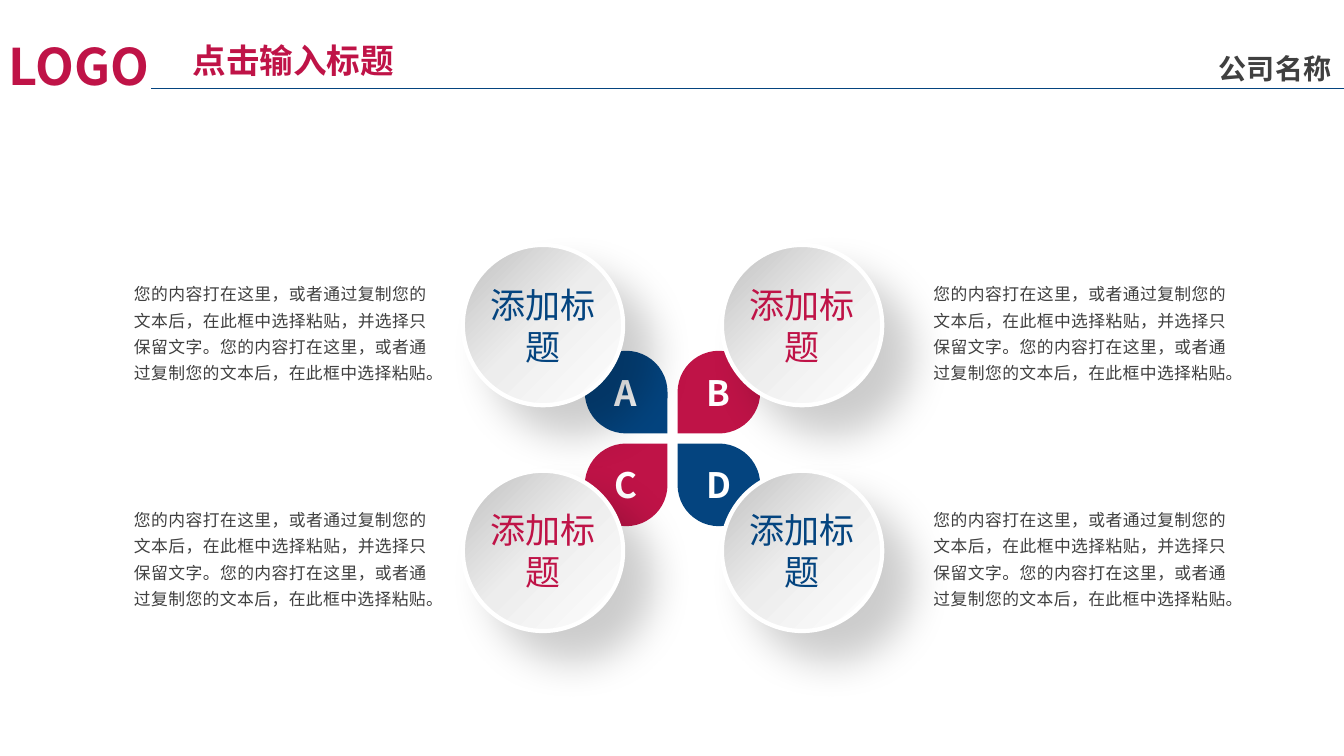
from lxml import etree
from pptx import Presentation
from pptx.dml.color import RGBColor
from pptx.enum.shapes import MSO_CONNECTOR, MSO_SHAPE
from pptx.enum.text import MSO_ANCHOR, MSO_AUTO_SIZE, PP_ALIGN
from pptx.oxml.ns import qn
from pptx.util import Inches, Pt

STRAIGHT = MSO_CONNECTOR.STRAIGHT
TEARDROP, OVAL, RECTANGLE = MSO_SHAPE.TEAR, MSO_SHAPE.OVAL, MSO_SHAPE.RECTANGLE
TOP, MIDDLE = MSO_ANCHOR.TOP, MSO_ANCHOR.MIDDLE
LEFT, CENTER, JUSTIFY = PP_ALIGN.LEFT, PP_ALIGN.CENTER, PP_ALIGN.JUSTIFY
GROW, FIXED = MSO_AUTO_SIZE.SHAPE_TO_FIT_TEXT, MSO_AUTO_SIZE.NONE

FONT = "Noto Sans CJK SC"
BLUE, RED, GRAY, WHITE = "04447F", "BF1347", "404040", "FFFFFF"
DISC_STOPS = [(0, "C0C0C0"), (49, "EDEDED"), (100, WHITE)]
BODY = ("您的内容打在这里，或者通过复制您的文本后，在此框中选择粘贴，并选择只"
        "保留文字。您的内容打在这里，或者通过复制您的文本后，在此框中选择粘贴。")

DISC, PETAL = 1.59, 0.82
# Letter, column, row, petal rotation, colour
TOPICS = [("A", 0, 0, 90, BLUE), ("B", 1, 0, 180, RED),
          ("C", 0, 1, 0, RED), ("D", 1, 1, 270, BLUE)]


def rgb(color):
    return RGBColor.from_string(color)


def box(left, top, width, height):
    return [Inches(length) for length in (left, top, width, height)]


def add_child(parent, tag, **attributes):
    child = etree.SubElement(parent, qn(tag))
    for name, value in attributes.items():
        child.set(name, str(value))
    return child


def write(shape, text, size, color, bold=False, align=LEFT, anchor=MIDDLE,
          wrap=False, fit=GROW, margins=(0.08, 0.04), spacing=1.0):
    frame = shape.text_frame
    frame.word_wrap = wrap
    frame.auto_size = fit
    frame.vertical_anchor = anchor
    frame.margin_left = frame.margin_right = Inches(margins[0])
    frame.margin_top = frame.margin_bottom = Inches(margins[1])
    paragraph = frame.paragraphs[0]
    paragraph.alignment = align
    paragraph.line_spacing = spacing
    run = paragraph.add_run()
    run.text = text
    run.font.name = FONT
    run.font.size = Pt(size)
    run.font.bold = bold
    run.font.color.rgb = rgb(color)
    add_child(run.font._element, "a:ea", typeface=FONT)


def add_solid(shapes, kind, area, color):
    shape = shapes.add_shape(kind, *box(*area))
    shape.shadow.inherit = False
    shape.fill.solid()
    shape.fill.fore_color.rgb = rgb(color)
    shape.line.fill.background()
    return shape


def add_header(slide, left, top, width):
    """Logo word, slide title, company name and the rule below them."""
    rule_top = top + 0.57
    rule = slide.shapes.add_connector(
        STRAIGHT, Inches(left + 1.5), Inches(rule_top),
        Inches(left + width), Inches(rule_top))
    rule.line.color.rgb = rgb(BLUE)
    rule.line.width = Pt(1)
    add_child(rule._element.spPr, "a:effectLst")

    title = slide.shapes.title
    title.left, title.top, title.width, title.height = box(
        left + 1.83, top + 0.05, 2.17, 0.48)
    write(title, "点击输入标题", 24, RED, bold=True)

    # Slightly wider than its four characters, so that they stay on one line
    company = slide.shapes.add_textbox(
        *box(left + width - 1.32, top + 0.16, 1.32, 0.41))
    write(company, "公司名称", 20, GRAY, bold=True, wrap=True, fit=FIXED)
    logo = slide.shapes.add_textbox(*box(left, top, 1.64, 0.68))
    write(logo, "LOGO", 36, RED, bold=True)


def add_description(slide, left, top):
    text_box = slide.shapes.add_textbox(*box(left, top, 3.1, 1.15))
    write(text_box, BODY, 12, GRAY, align=JUSTIFY, anchor=TOP, wrap=True,
          margins=(0.1, 0.05), spacing=1.3)


def add_petal(slide, left, top, letter, rotation, color):
    """Teardrop grouped with its letter."""
    group = slide.shapes.add_group_shape()
    petal = add_solid(group.shapes, TEARDROP, (left, top, PETAL, PETAL), color)
    petal.rotation = rotation
    label = add_solid(group.shapes, RECTANGLE,
                      (left + 0.18, top + 0.15, 0.46, 0.52), color)
    write(label, letter, 25, WHITE, bold=True, align=CENTER,
          margins=(0.1, 0.05))


def add_disc(slide, left, top, color):
    """Shaded circle with a white rim and a soft shadow."""
    disc = slide.shapes.add_shape(OVAL, *box(left, top, DISC, DISC))
    disc.line.color.rgb = rgb(WHITE)
    disc.line.width = Pt(3)

    # Three-stop gradient
    disc.fill.gradient()
    disc.fill.gradient_angle = 315
    properties = disc._element.spPr
    stops = properties.find(".//" + qn("a:gsLst"))
    for stop in list(stops):
        stops.remove(stop)
    for position, stop_color in DISC_STOPS:
        stop = add_child(stops, "a:gs", pos=position * 1000)
        add_child(stop, "a:srgbClr", val=stop_color)

    # Shadow towards the lower right
    disc.shadow.inherit = False
    shadow = add_child(properties.find(qn("a:effectLst")), "a:outerShdw",
                       blurRad=Pt(29), dist=Pt(29), dir=45 * 60000,
                       algn="tl", rotWithShape=0)
    shade = add_child(shadow, "a:srgbClr", val="000000")
    add_child(shade, "a:alpha", val=20000)

    write(disc, "添加标题", 25, color, align=CENTER, wrap=True, fit=FIXED,
          margins=(0, 0.05))


def add_clover(slide, left, top):
    """Four descriptions, four petals and four discs, back to front."""
    for letter, column, row, rotation, color in TOPICS:
        add_description(slide, left + 7.93 * column, top + 0.28 + 2.24 * row)
    for letter, column, row, rotation, color in TOPICS:
        add_petal(slide, left + 4.57 + 0.92 * column, top + 1.05 + 0.92 * row,
                  letter, rotation, color)
    for letter, column, row, rotation, color in TOPICS:
        add_disc(slide, left + 3.36 + 2.57 * column, top + 2.24 * row, color)


def main():
    presentation = Presentation()
    presentation.slide_width = Inches(13.33)
    presentation.slide_height = Inches(7.5)
    slide = presentation.slides.add_slide(presentation.slide_layouts[5])
    add_clover(slide, 1.23, 2.43)
    add_header(slide, 0, 0.31, 13.33)
    presentation.save("out.pptx")


if __name__ == "__main__":
    main()
